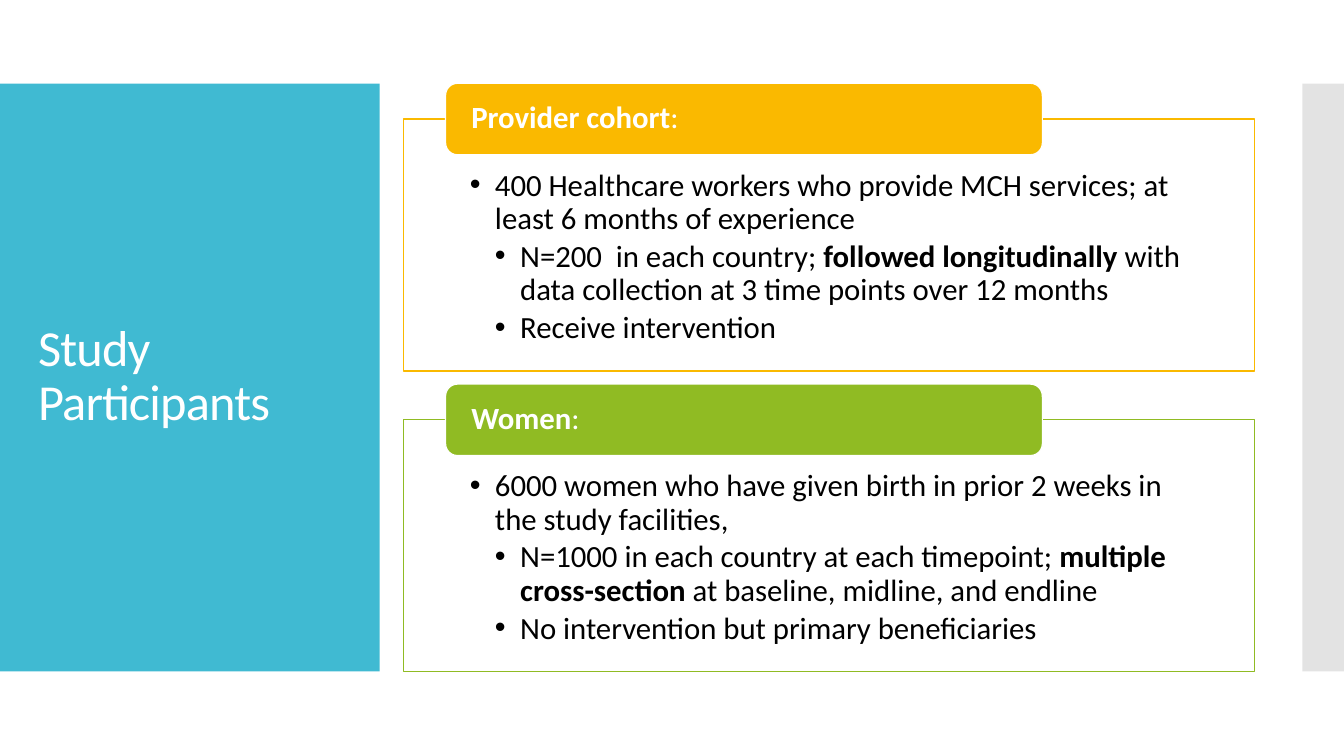
from dataclasses import dataclass

from lxml import etree
from pptx import Presentation
from pptx.dml.color import RGBColor
from pptx.enum.shapes import MSO_SHAPE
from pptx.enum.text import MSO_ANCHOR, MSO_AUTO_SIZE, PP_ALIGN
from pptx.oxml.ns import qn
from pptx.util import Cm, Pt

RECTANGLE = MSO_SHAPE.RECTANGLE
ROUNDED = MSO_SHAPE.ROUNDED_RECTANGLE
TOP = MSO_ANCHOR.TOP
MIDDLE = MSO_ANCHOR.MIDDLE
LEFT = PP_ALIGN.LEFT
NO_AUTOFIT = MSO_AUTO_SIZE.NONE
TITLE_ONLY = 5


@dataclass(frozen=True)
class Theme:
    font: str = "Calibri"
    white: str = "FFFFFF"
    black: str = "000000"
    teal: str = "40BAD2"
    gray: str = "C8C8C8"
    amber: str = "FAB900"
    green: str = "90BB23"
    title_size: float = 36
    body_size: float = 22
    line_width: float = 0.85
    line_spacing: float = 0.9
    bullet_gap: float = 3.3
    bullet_indent: float = 0.635


class SlideBuilder:
    def __init__(self, slide, theme):
        self.slide = slide
        self.theme = theme

    def shape(self, kind, box, fill, line=None, opacity=100):
        shape = self.slide.shapes.add_shape(kind, *map(Cm, box))
        shape.shadow.inherit = False
        shape.fill.solid()
        shape.fill.fore_color.rgb = RGBColor.from_string(fill)
        if opacity < 100:
            color = shape.element.spPr.find(qn("a:solidFill"))[0]
            etree.SubElement(color, qn("a:alpha"), val=str(opacity * 1000))
        if line:
            shape.line.color.rgb = RGBColor.from_string(line)
            shape.line.width = Pt(self.theme.line_width)
        else:
            shape.line.fill.background()
        return shape

    def frame(self, shape, anchor, insets):
        frame = shape.text_frame
        frame.word_wrap = True
        frame.auto_size = NO_AUTOFIT
        frame.vertical_anchor = anchor
        frame.margin_left, frame.margin_top, frame.margin_right, frame.margin_bottom = map(Cm, insets)
        return frame

    def add_runs(self, paragraph, runs, size, color):
        paragraph.alignment = LEFT
        paragraph.line_spacing = self.theme.line_spacing
        for text, bold in runs:
            run = paragraph.add_run()
            run.text = text
            run.font.name = self.theme.font
            run.font.size = Pt(size)
            run.font.bold = bold
            run.font.color.rgb = RGBColor.from_string(color)

    def bullet(self, paragraph, level):
        indent = Cm(self.theme.bullet_indent)
        paragraph.level = level
        paragraph.space_after = Pt(self.theme.bullet_gap)
        properties = paragraph._p.get_or_add_pPr()
        properties.set("marL", str(indent * level))
        properties.set("indent", str(-indent))
        etree.SubElement(properties, qn("a:buFont"), typeface="Arial")
        etree.SubElement(properties, qn("a:buChar"), char="•")

    def side_panel(self, box, fill, opacity=100):
        panel = self.shape(RECTANGLE, box, fill, opacity=opacity)
        self.slide.shapes.title.element.addprevious(panel.element)

    def title(self, text, box):
        title = self.slide.shapes.title
        title.left, title.top, title.width, title.height = map(Cm, box)
        paragraph = self.frame(title, MIDDLE, (0.25, 0.13, 0.25, 0.13)).paragraphs[0]
        self.add_runs(paragraph, [(text, False)], self.theme.title_size, self.theme.white)
        paragraph.runs[0].font._element.set("spc", "-60")

    def cohort(self, top, color, heading, bullets):
        theme = self.theme
        body = self.shape(RECTANGLE, (10.16, top + 0.9, 21.46, 6.35), theme.white, color, 90)
        frame = self.frame(body, TOP, (1.68, 1.27, 1.68, 0.43))
        for index, (level, runs) in enumerate(bullets):
            paragraph = frame.add_paragraph() if index else frame.paragraphs[0]
            self.bullet(paragraph, level)
            self.add_runs(paragraph, runs, theme.body_size, theme.black)
        tab = self.shape(ROUNDED, (11.23, top, 15.04, 1.8), color, theme.white)
        paragraph = self.frame(tab, MIDDLE, (0.56, 0, 0.56, 0)).paragraphs[0]
        self.add_runs(paragraph, [(heading, True), (":", False)], theme.body_size, theme.white)


def main():
    theme = Theme()
    presentation = Presentation()
    presentation.slide_width = Cm(33.87)
    presentation.slide_height = Cm(19.05)
    slide = presentation.slides.add_slide(presentation.slide_layouts[TITLE_ONLY])
    builder = SlideBuilder(slide, theme)

    builder.side_panel((0, 2.11, 9.57, 14.81), theme.teal)
    builder.side_panel((32.82, 2.11, 1.05, 14.81), theme.gray, 50)
    builder.title("Study Participants", (0.71, 3.12, 8.18, 12.78))

    cohorts = [
        (theme.amber, "Provider cohort", [
            (1, [("400 Healthcare workers who provide MCH services; at least 6 months of experience", False)]),
            (2, [("N=200  in each country; ", False),
                 ("followed longitudinally ", True),
                 ("with data collection at 3 time points over 12 months", False)]),
            (2, [("Receive intervention", False)]),
        ]),
        (theme.green, "Women", [
            (1, [("6000 women who have given birth in prior 2 weeks in the study facilities,", False)]),
            (2, [("N=1000 in each country at each timepoint; ", False),
                 ("multiple cross-section", True),
                 (" at baseline, midline, and endline", False)]),
            (2, [("No intervention but primary beneficiaries", False)]),
        ]),
    ]
    for index, (color, heading, bullets) in enumerate(cohorts):
        builder.cohort(2.1 + 7.58 * index, color, heading, bullets)

    presentation.save("out.pptx")


if __name__ == "__main__":
    main()
